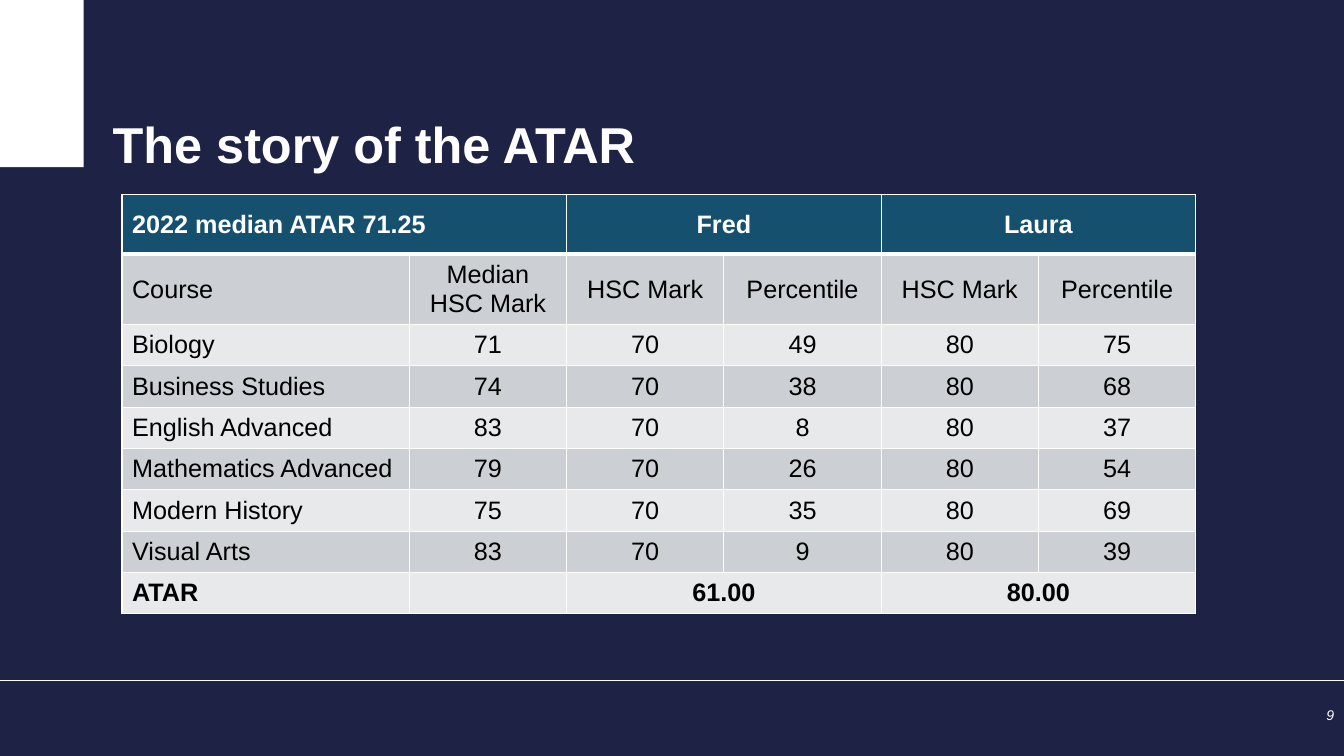
from lxml import etree
from pptx import Presentation
from pptx.dml.color import RGBColor
from pptx.enum.shapes import MSO_CONNECTOR, MSO_SHAPE
from pptx.enum.text import MSO_ANCHOR, PP_ALIGN
from pptx.oxml.ns import qn
from pptx.util import Inches, Pt

NAVY = RGBColor(0x1E, 0x22, 0x45)
TEAL = RGBColor(0x15, 0x50, 0x6F)
GREY = RGBColor(0xCC, 0xD0, 0xD5)
PALE = RGBColor(0xE8, 0xE9, 0xEB)
WHITE = RGBColor(0xFF, 0xFF, 0xFF)
BLACK = RGBColor(0x00, 0x00, 0x00)

LEFT, CENTER, RIGHT = PP_ALIGN.LEFT, PP_ALIGN.CENTER, PP_ALIGN.RIGHT
MIDDLE, BOTTOM = MSO_ANCHOR.MIDDLE, MSO_ANCHOR.BOTTOM
RECT, STRAIGHT = MSO_SHAPE.RECTANGLE, MSO_CONNECTOR.STRAIGHT

WIDTHS = [2.85] + [1.56] * 5
HEIGHTS = [0.59] * 2 + [0.41] * 7
ROWS = [
    ["2022 median ATAR 71.25", "", "Fred", "", "Laura", ""],
    ["Course", "Median\nHSC Mark", "HSC Mark", "Percentile", "HSC Mark", "Percentile"],
    ["Biology", "71", "70", "49", "80", "75"],
    ["Business Studies", "74", "70", "38", "80", "68"],
    ["English Advanced", "83", "70", "8", "80", "37"],
    ["Mathematics Advanced", "79", "70", "26", "80", "54"],
    ["Modern History", "75", "70", "35", "80", "69"],
    ["Visual Arts", "83", "70", "9", "80", "39"],
    ["ATAR", "", "61.00", "", "80.00", ""],
]
LAST = len(ROWS) - 1
MERGED = [(0, 0), (0, 2), (0, 4), (LAST, 2), (LAST, 4)]


class Page:
    font = "Arial"

    def __init__(self, deck, color):
        self.slide = deck.slides.add_slide(deck.slide_layouts[6])
        self.shapes = self.slide.shapes
        fill = self.slide.background.fill
        fill.solid()
        fill.fore_color.rgb = color

    def style(self, frame, size, color, align=LEFT, bold=False, italic=False):
        for para in frame.paragraphs:
            para.alignment = align
            for run in para.runs:
                font = run.font
                font.name, font.size = self.font, Pt(size)
                font.bold, font.italic = bold, italic
                font.color.rgb = color

    def block(self, x, y, w, h, color):
        shape = self.shapes.add_shape(RECT, Inches(x), Inches(y), Inches(w), Inches(h))
        shape.shadow.inherit = False
        shape.fill.solid()
        shape.fill.fore_color.rgb = color
        shape.line.fill.background()

    def rule(self, x, y, end, color, width):
        line = self.shapes.add_connector(STRAIGHT, Inches(x), Inches(y), Inches(end), Inches(y))
        line.line.color.rgb = color
        line.line.width = Pt(width)
        etree.SubElement(line._element.spPr, qn("a:effectLst"))

    def text(self, x, y, w, h, words, size, anchor, spacing=1.0, **look):
        box = self.shapes.add_textbox(Inches(x), Inches(y), Inches(w), Inches(h))
        frame = box.text_frame
        frame.word_wrap = True
        frame.vertical_anchor = anchor
        frame.margin_left = frame.margin_right = Inches(0.1)
        frame.margin_top = frame.margin_bottom = Inches(0.1)
        frame.text = words
        frame.paragraphs[0].line_spacing = spacing
        self.style(frame, size, WHITE, **look)

    def border(self, cell, side, width):
        edge = etree.SubElement(cell._tc.get_or_add_tcPr(), qn("a:ln" + side), w=str(Pt(width)))
        fill = etree.SubElement(edge, qn("a:solidFill"))
        etree.SubElement(fill, qn("a:srgbClr"), val=str(WHITE))

    def table(self, x, y, rows, widths, heights, merged):
        grid = self.shapes.add_table(len(rows), len(widths), Inches(x), Inches(y),
                                     Inches(sum(widths)), Inches(sum(heights))).table
        for col, width in zip(grid.columns, widths):
            col.width = Inches(width)
        for row, height in zip(grid.rows, heights):
            row.height = Inches(height)
        for r, c in merged:
            grid.cell(r, c).merge(grid.cell(r, c + 1))
        for r, row in enumerate(rows):
            head = r == 0
            shade = TEAL if head else GREY if r % 2 else PALE
            for c, words in enumerate(row):
                cell = grid.cell(r, c)
                # Borders come before the fill; a heavy rule closes the header
                for side in "LRTB":
                    heavy = (head and side == "B") or (r == 1 and side == "T")
                    self.border(cell, side, 3 if heavy else 1)
                cell.fill.solid()
                cell.fill.fore_color.rgb = shade
                cell.vertical_anchor = MIDDLE
                cell.text_frame.text = words
                self.style(cell.text_frame, 18, WHITE if head else BLACK,
                           CENTER if c else LEFT, bold=r in (0, len(rows) - 1))


def main():
    deck = Presentation()
    deck.slide_width, deck.slide_height = Inches(13.33), Inches(7.5)
    page = Page(deck, NAVY)

    # Corner block and footer rule
    page.block(0, 0, 0.83, 1.66, WHITE)
    page.rule(0, 6.75, 13.33, WHITE, 0.5)

    # Title
    page.text(1.02, 0, 10.9, 1.83, "The story of the ATAR", 36, BOTTOM, spacing=0.9, bold=True)

    # Marks by course
    page.table(1.21, 1.93, ROWS, WIDTHS, HEIGHTS, MERGED)

    # Page number
    page.text(12.5, 6.89, 0.83, 0.4, "9", 10, MIDDLE, align=RIGHT, italic=True)

    deck.save("out.pptx")


if __name__ == "__main__":
    main()
